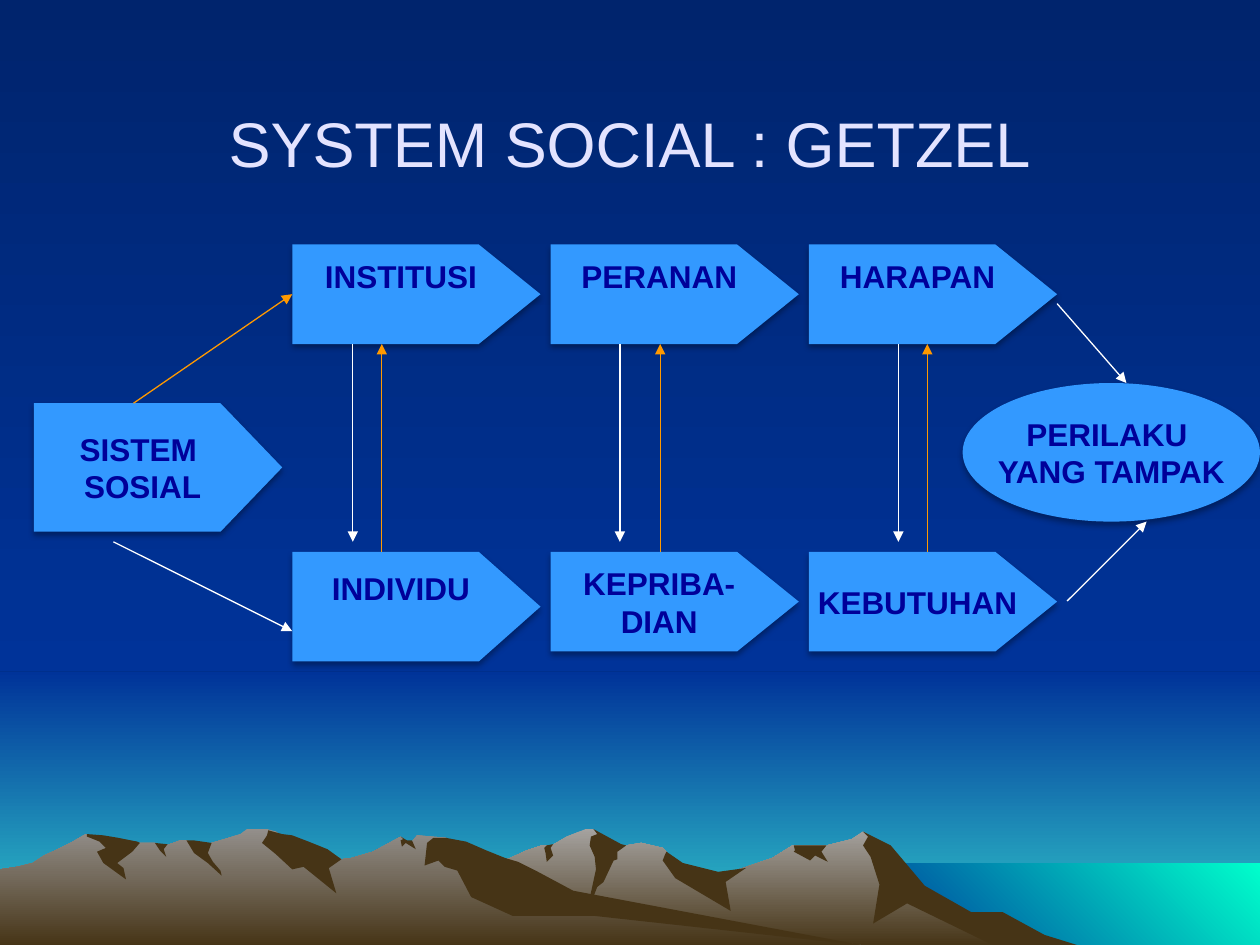
from lxml import etree
from pptx import Presentation
from pptx.dml.color import RGBColor
from pptx.enum.shapes import MSO_CONNECTOR as CONNECTOR, MSO_SHAPE as SHAPE
from pptx.enum.text import MSO_ANCHOR as ANCHOR, PP_ALIGN as ALIGN
from pptx.oxml.ns import qn
from pptx.util import Inches, Pt

NAVY = RGBColor(0x00, 0x24, 0x6D)
BLUE = RGBColor(0x00, 0x33, 0x99)
TEAL = RGBColor(0x33, 0xCC, 0xCC)
AQUA = RGBColor(0x00, 0xFF, 0xCC)
ROCK_FAR = RGBColor(0xA5, 0xA2, 0x9F)
ROCK_NEAR = RGBColor(0x93, 0x8F, 0x8B)
BROWN = RGBColor(0x46, 0x34, 0x16)
SKY_BLUE = RGBColor(0x33, 0x99, 0xFF)
LABEL = RGBColor(0x00, 0x00, 0x99)
TITLE = RGBColor(0xE3, 0xE3, 0xFF)
WHITE = RGBColor(0xFF, 0xFF, 0xFF)
ORANGE = RGBColor(0xFF, 0x99, 0x00)

# Mountain outlines, in hundredths of an inch
FAR_RIDGE = [
    (802, 740), (778, 727), (764, 723), (723, 698), (702, 671), (685, 660), (676, 666),
    (656, 671), (629, 671), (613, 681), (566, 697), (536, 690), (529, 676), (526, 673),
    (509, 669), (497, 671), (486, 673), (474, 661), (471, 658), (465, 658), (450, 664),
    (438, 671), (430, 671), (418, 675), (405, 681), (394, 685), (355, 698), (327, 709),
    (277, 739), (258, 751), (821, 751)]
FAR_SHADES = [
    [(796, 724), (771, 724), (734, 703), (707, 671), (685, 660), (689, 664), (685, 671),
     (691, 680), (698, 702), (693, 733), (720, 717), (792, 752), (858, 751), (829, 742)],
    [(471, 658), (474, 662), (469, 664), (468, 671), (472, 680), (473, 690), (465, 727),
     (474, 704), (479, 700), (487, 683), (490, 682), (490, 676), (497, 671), (493, 670)],
    [(529, 676), (528, 678), (526, 683), (536, 697), (580, 723), (576, 700), (592, 689),
     (570, 692), (542, 685)],
    [(650, 671), (630, 671), (631, 675), (630, 676), (643, 683), (647, 679), (657, 684),
     (652, 676), (656, 671)],
    [(433, 677), (432, 673), (434, 671), (439, 670), (437, 673), (439, 679), (434, 684)]]
NEAR_RIDGE = [
    (690, 751), (667, 748), (432, 712), (354, 665), (331, 663), (327, 668), (323, 668),
    (318, 664), (296, 676), (279, 681), (271, 682), (260, 676), (236, 681), (223, 663),
    (219, 660), (212, 658), (196, 658), (191, 662), (178, 666), (168, 669), (160, 671),
    (148, 667), (143, 667), (132, 671), (128, 671), (123, 669), (111, 669), (94, 671),
    (68, 662), (56, 669), (46, 674), (35, 679), (26, 685), (14, 688), (0, 690), (0, 751)]
NEAR_SHADES = [
    [(212, 663), (208, 669), (219, 678), (232, 690), (241, 688), (267, 709), (261, 689),
     (271, 682), (260, 674), (245, 668), (232, 663), (224, 662), (213, 659)],
    [(370, 668), (354, 665), (344, 665), (339, 669), (337, 687), (348, 683), (353, 688),
     (363, 691), (374, 712), (407, 727), (472, 727), (690, 751), (683, 750), (455, 707),
     (427, 692), (411, 684), (401, 681), (386, 675)],
    [(318, 667), (320, 666), (318, 664), (323, 667), (327, 667), (330, 674), (322, 669),
     (319, 672)],
    [(154, 667), (168, 669), (165, 677), (169, 684), (175, 691), (176, 695), (165, 685),
     (154, 677), (148, 667)],
    [(133, 670), (130, 674), (132, 680), (127, 675), (123, 669)],
    [(109, 668), (111, 669), (105, 676), (93, 685), (98, 689), (100, 698), (82, 685),
     (77, 676), (84, 673), (79, 668), (69, 664), (69, 662), (82, 663), (94, 665)]]


class Diagram:
    font_name = "Arial"
    plate_width = 1.97
    plate_point = 0.49

    def __init__(self, slide):
        self.slide = slide
        self.shapes = slide.shapes

    def gradient(self, fill, start, end, angle):
        fill.gradient()
        fill.gradient_angle = angle
        for stop, color in zip(fill.gradient_stops, (start, end)):
            stop.color.rgb = color

    def paint(self, shape, colors, angle=270):
        """One colour gives a solid fill, two give a gradient."""
        shape.shadow.inherit = False
        shape.line.fill.background()
        if len(colors) == 1:
            shape.fill.solid()
            shape.fill.fore_color.rgb = colors[0]
        else:
            self.gradient(shape.fill, *colors, angle)

    def panel(self, left, top, width, height, colors, angle=270):
        shape = self.shapes.add_shape(
            SHAPE.RECTANGLE, Inches(left), Inches(top), Inches(width), Inches(height))
        self.paint(shape, colors, angle)

    def outline(self, points, *colors):
        builder = self.shapes.build_freeform(*points[0], scale=Inches(0.01))
        builder.add_line_segments(points[1:], close=True)
        self.paint(builder.convert_to_shape(), colors)

    def set_text(self, frame, lines, size, color, bold):
        frame.vertical_anchor = ANCHOR.MIDDLE
        frame.text = "\n".join(lines)
        for paragraph in frame.paragraphs:
            paragraph.alignment = ALIGN.CENTER
            font = paragraph.font
            font.name, font.size, font.bold = self.font_name, Pt(size), bold
            font.color.rgb = color

    def title(self, text):
        title = self.shapes.title
        title.left, title.top = Inches(0.75), Inches(0.33)
        title.width, title.height = Inches(8.5), Inches(1.6)
        self.set_text(title.text_frame, [text], 36, TITLE, False)
        self.shapes._spTree.append(title._element)  # in front of the scenery

    def node(self, kind, left, top, width, height, lines, raised=False):
        shape = self.shapes.add_shape(
            kind, Inches(left), Inches(top), Inches(width), Inches(height))
        self.paint(shape, [SKY_BLUE])
        effects = shape._element.spPr.find(qn("a:effectLst"))
        shadow = etree.SubElement(effects, qn("a:outerShdw"), blurRad=str(Pt(3.5)),
                                  dist=str(Pt(2.2)), dir="5400000", rotWithShape="0")
        black = etree.SubElement(shadow, qn("a:srgbClr"), val="000000")
        etree.SubElement(black, qn("a:alpha"), val="32000")
        frame = shape.text_frame
        frame.word_wrap = False
        if raised:
            frame.margin_bottom = Inches(0.34)
        self.set_text(frame, lines, 18, LABEL, True)
        return shape

    def plate(self, left, top, height, lines, raised=False):
        shape = self.node(SHAPE.PENTAGON, left, top, self.plate_width, height, lines, raised)
        shape.adjustments[0] = self.plate_point / height
        return shape

    def arrow(self, start, end, color, target=None):
        connector = self.shapes.add_connector(
            CONNECTOR.STRAIGHT, *(Inches(value) for value in (*start, *end)))
        if target is not None:
            connector.end_connect(target, 1)
        connector.line.color.rgb = color
        connector.line.width = Pt(0.75)
        etree.SubElement(connector.line._get_or_add_ln(), qn("a:tailEnd"), type="triangle")
        etree.SubElement(connector._element.spPr, qn("a:effectLst"))


def main():
    presentation = Presentation()
    presentation.slide_width, presentation.slide_height = Inches(10), Inches(7.5)
    slide = presentation.slides.add_slide(presentation.slide_layouts[5])
    diagram = Diagram(slide)

    # Sky, sea and mountains
    diagram.gradient(slide.background.fill, NAVY, BLUE, 270)
    diagram.panel(0, 5.33, 10, 2.17, (BLUE, TEAL))
    diagram.panel(0, 0, 10, 5.33, (NAVY, BLUE))
    diagram.panel(6.83, 6.85, 3.17, 0.65, (BLUE, AQUA), angle=45)
    for ridge, light, shades in ((FAR_RIDGE, ROCK_FAR, FAR_SHADES),
                                 (NEAR_RIDGE, ROCK_NEAR, NEAR_SHADES)):
        diagram.outline(ridge, light, BROWN)
        for shade in shades:
            diagram.outline(shade, BROWN)

    diagram.title("SYSTEM SOCIAL : GETZEL")

    # Boxes: the institutional row above, the personal row below
    columns = [2.32 + 2.05 * index for index in range(3)]
    upper, lower, height = 1.94, 4.38, 0.79
    diagram.plate(0.27, 3.2, 1.02, ["SISTEM ", "SOSIAL"])
    institution, *_ = [
        diagram.plate(left, upper, height, [text], raised=True)
        for left, text in zip(columns, ("INSTITUSI", "PERANAN", "HARAPAN"))]
    diagram.plate(columns[0], lower, 0.87, ["INDIVIDU"], raised=True)
    diagram.plate(columns[1], lower, height, ["KEPRIBA-", "DIAN"])
    diagram.plate(columns[2], lower, height, ["KEBUTUHAN"])
    diagram.node(SHAPE.OVAL, 7.64, 3.04, 2.36, 1.1, ["PERILAKU ", "YANG TAMPAK"])

    # Arrows from the social system and to the behaviour
    diagram.arrow((1.06, 3.2), (2.32, 2.33), ORANGE, target=institution)
    diagram.arrow((0.9, 4.3), (2.32, 5.01), WHITE)
    diagram.arrow((8.39, 2.41), (8.94, 3.04), WHITE)
    diagram.arrow((8.47, 4.77), (9.1, 4.14), WHITE)

    # Arrows between the rows
    for down, up in ((2.8, 3.03), (4.92, 5.24), (7.13, 7.36)):
        diagram.arrow((down, upper + height), (down, 4.3), WHITE)
        diagram.arrow((up, lower), (up, upper + height), ORANGE)

    presentation.save("out.pptx")


if __name__ == "__main__":
    main()
